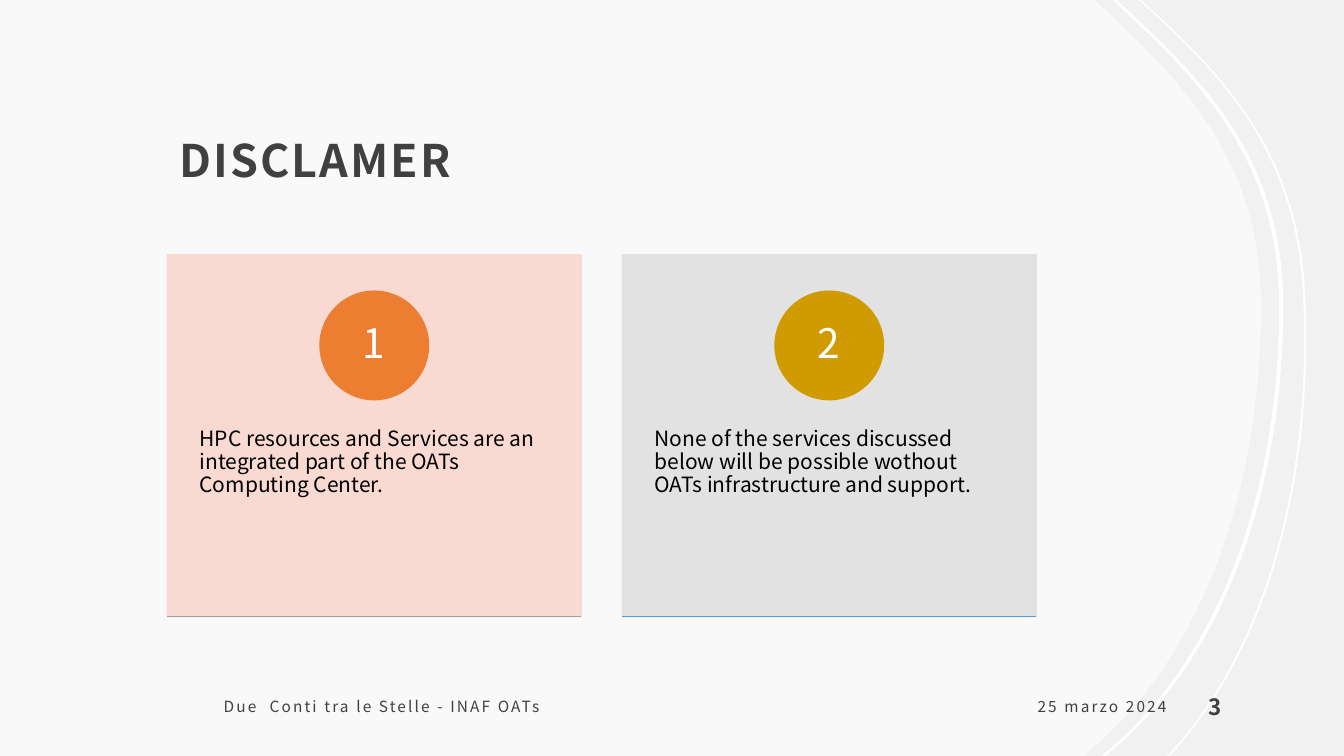
from lxml import etree
from pptx import Presentation
from pptx.dml.color import RGBColor
from pptx.enum.shapes import MSO_CONNECTOR as CONN, MSO_SHAPE as SHAPE
from pptx.enum.text import MSO_ANCHOR as ANCHOR, MSO_AUTO_SIZE as AUTO, PP_ALIGN as ALIGN
from pptx.oxml.ns import qn
from pptx.util import Pt

FONT = "Noto Sans CJK JP"
DARK = "404040"
FOOTER_INSETS = (8.64, 8.64, 8.64, 7.2)
EDGE_POINTS = 9
CURVE_STARTS = (2, 5)


def rgb(color):
    return RGBColor.from_string(color)


def paint(fill, color, alpha=None):
    fill.solid()
    fill.fore_color.rgb = rgb(color)
    if alpha is not None:
        clr = fill._xPr.find(qn("a:solidFill"))[0]
        etree.SubElement(clr, qn("a:alpha")).set("val", str(alpha * 1000))


def write(sp, text, size=11, color=DARK, bold=False, align=ALIGN.LEFT, anchor=ANCHOR.TOP,
          insets=FOOTER_INSETS, line_spacing=1.0, spacing=0):
    tf = sp.text_frame
    tf.word_wrap = True
    tf.auto_size = AUTO.NONE
    tf.vertical_anchor = anchor
    tf.margin_left, tf.margin_top, tf.margin_right, tf.margin_bottom = map(Pt, insets)
    p = tf.paragraphs[0]
    p.alignment = align
    p.line_spacing = line_spacing
    r = p.add_run()
    r.text = text
    r.font.name, r.font.size, r.font.bold = FONT, Pt(size), bold
    r.font.color.rgb = rgb(color)
    rPr = r.font._element
    if spacing:
        rPr.set("spc", str(int(spacing * 100)))
    etree.SubElement(rPr, qn("a:ea")).set("typeface", FONT)


def shift(points, dx):
    return [(x + dx, y) for x, y in points]


def bend(sp, points):
    geo = next(sp._element.iter(qn("a:path")))
    steps = list(geo)
    starts = [i for i in range(len(points)) if i % EDGE_POINTS in CURVE_STARTS]
    for i in starts:
        curve = etree.Element(qn("a:cubicBezTo"))
        steps[i].addprevious(curve)
        for step in steps[i:i + 3]:
            curve.append(step[0])
            geo.remove(step)
    controls = {j for i in starts for j in (i, i + 1)}
    xs = [x for i, (x, y) in enumerate(points) if i not in controls]
    sp.width = Pt(max(xs)) - Pt(min(xs))
    geo.set("w", str(sp.width))


class Deck:
    def __init__(self, width, height):
        self.prs = Presentation()
        self.prs.slide_width, self.prs.slide_height = Pt(width), Pt(height)

    def slide(self, background):
        self.s = self.prs.slides.add_slide(self.prs.slide_layouts[5])
        paint(self.s.background.fill, background)

    def title(self, text, box, **fmt):
        sp = self.s.shapes.title
        sp.left, sp.top, sp.width, sp.height = map(Pt, box)
        write(sp, text, **fmt)
        self.s.shapes._spTree.append(sp._element)

    def text(self, text, box, **fmt):
        write(self.s.shapes.add_textbox(*map(Pt, box)), text, **fmt)

    def shape(self, kind, box, color, alpha=None):
        sp = self.s.shapes.add_shape(kind, *map(Pt, box))
        sp.shadow.inherit = False
        paint(sp.fill, color, alpha)
        paint(sp.line.fill, color, alpha)
        sp.line.width = Pt(1)

    def outline(self, points, color, alpha=None):
        start, *rest = [(Pt(x), Pt(y)) for x, y in points]
        builder = self.s.shapes.build_freeform(*start)
        builder.add_line_segments(rest, close=True)
        sp = builder.convert_to_shape()
        sp.shadow.inherit = False
        paint(sp.fill, color, alpha)
        sp.line.fill.background()
        bend(sp, points)

    def band(self, edge, width):
        self.outline(edge + shift(edge, width)[::-1], "FFFFFF")

    def rule(self, x, y, width, color):
        line = self.s.shapes.add_connector(CONN.STRAIGHT, Pt(x), Pt(y), Pt(x + width), Pt(y))
        line.line.color.rgb = rgb(color)
        line.line.width = Pt(1)
        etree.SubElement(line._element.spPr, qn("a:effectLst"))

    def card(self, x, number, text, panel, accent, rule):
        top, width, disc, badge = 182, 295.5, 77.5, 55
        mid = x + width / 2
        self.shape(SHAPE.RECTANGLE, (x, top, width, 258.5), panel, 90)
        self.text(text, (x, 280.3, width, 155), size=15, color="000000", line_spacing=0.9,
                  insets=(23, 26, 23, 26))
        self.shape(SHAPE.OVAL, (mid - disc / 2, top + 26, disc, disc), accent)
        self.text(str(number), (mid - badge / 2, top + 37.5, badge, badge), size=29,
                  color="FFFFFF", align=ALIGN.CENTER, anchor=ANCHOR.MIDDLE,
                  line_spacing=0.9, insets=(6, 1, 6, 1))
        self.rule(x, 440.2, width, rule)


def main():
    deck = Deck(960, 540)
    deck.slide("F2F1F1")

    inner = [(794.9, 0), (821.5, 25.2), (872.6, 74.9), (913.7, 128.9), (913.7, 218.9),
             (913.7, 354.2), (869, 473), (788.4, 538.6), (787, 540)]
    outer = [(813.6, 0), (832.3, 17.3), (884.9, 67), (927.4, 121), (931, 213.8),
             (936.7, 345.6), (902.9, 464.4), (835.9, 537.8), (833.8, 540)]
    deck.outline([*shift(inner, -13), (0, 540), (0, 0)], "FFFFFF", 60)
    deck.title("DISCLAMER", (119.6, 34.6, 615.6, 105.8), size=32, bold=True,
               anchor=ANCHOR.BOTTOM, line_spacing=1.3, spacing=1.5)
    deck.band(outer, 1.44)
    deck.band(inner, 2.88)

    cards = [
        ("HPC resources and Services are an integrated part of the OATs Computing Center.",
         "F8D7CE", "ED7D31", "A3A3A3"),
        ("None of the services discussed below will be possible wothout OATs infrastructure "
         "and support.", "E0E0E0", "CF9B00", "5B9BD5"),
    ]
    for i, card in enumerate(cards):
        deck.card(119.6 + 325 * i, i + 1, *card)

    deck.text("25 marzo 2024", (618, 486, 224, 36), align=ALIGN.RIGHT,
              anchor=ANCHOR.MIDDLE, spacing=1.5)
    deck.text("Due  Conti tra le Stelle - INAF OATs", (151.2, 486, 446.4, 36),
              anchor=ANCHOR.MIDDLE, spacing=1.5)
    deck.text("3", (854.6, 485.5, 93.6, 36), size=16, bold=True, anchor=ANCHOR.BOTTOM)

    deck.prs.save("out.pptx")


if __name__ == "__main__":
    main()
